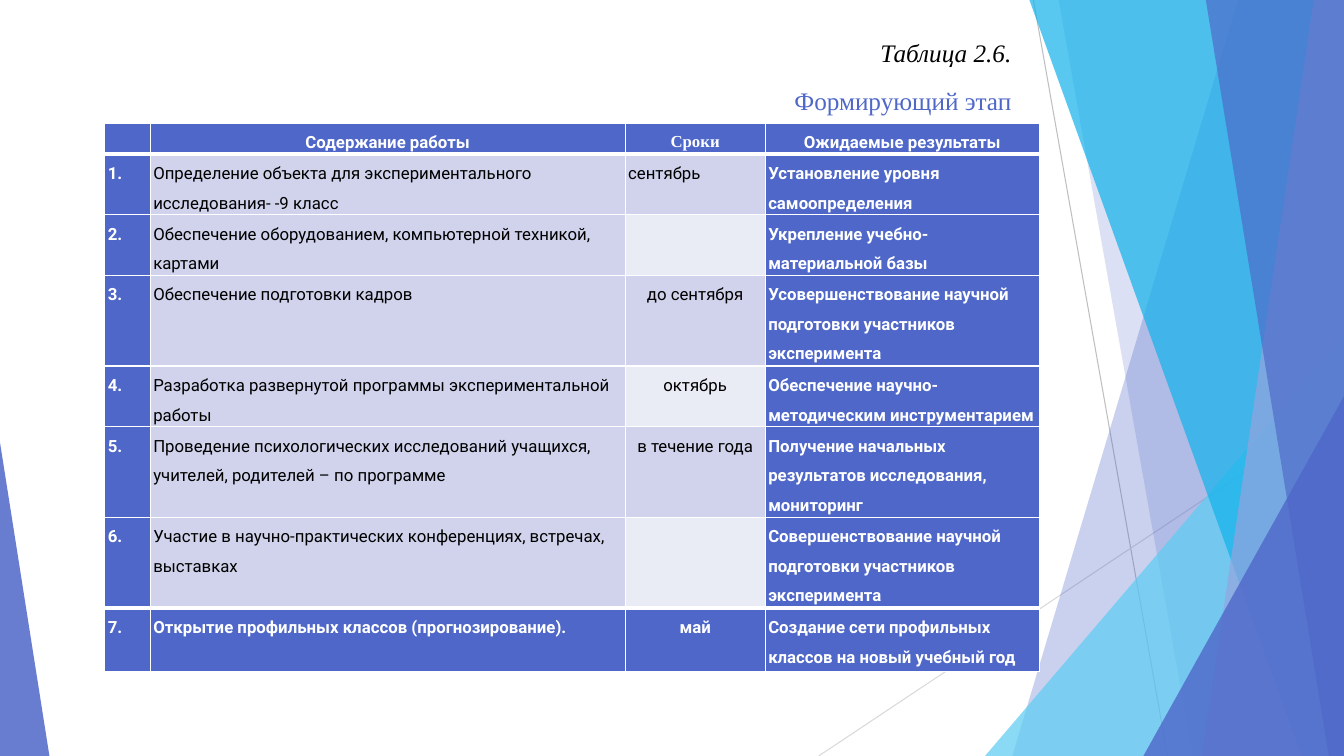
from lxml.etree import SubElement as Sub
from pptx import Presentation
from pptx.dml.color import RGBColor as Rgb
from pptx.enum.shapes import MSO_CONNECTOR as Conn, MSO_SHAPE as Kind
from pptx.enum.text import PP_ALIGN as Al
from pptx.oxml.ns import qn
from pptx.util import Inches, Pt

WHITE = Rgb(0xFF, 0xFF, 0xFF)
BLACK = Rgb(0, 0, 0)
BLUE = Rgb(0x4E, 0x67, 0xC8)
SKY = Rgb(0x5E, 0xCC, 0xF3)
CYAN = Rgb(0x12, 0xB2, 0xEB)
LILAC = Rgb(0x95, 0xA4, 0xDE)
BAND = Rgb(0xD0, 0xD3, 0xEB)
PALE = Rgb(0xE9, 0xEB, 0xF5)
GREY = Rgb(0xBF, 0xBF, 0xBF)
SILVER = Rgb(0xD9, 0xD9, 0xD9)
SANS, SERIF = "Roboto", "Times New Roman"
WIDE, HIGH = 13.33, 7.5

COLS = [0.45, 4.71, 1.39, 2.72]
TALL = [0.31, 0.58, 0.59, 0.88, 0.59, 0.88, 0.88, 0.63]
ROWS = [
    ("", "Содержание работы", "Сроки", "Ожидаемые результаты"),
    ("1.", "Определение объекта для экспериментального исследования- -9 класс",
     "сентябрь", "Установление уровня самоопределения"),
    ("2.", "Обеспечение оборудованием, компьютерной техникой, картами",
     "", "Укрепление учебно-материальной базы"),
    ("3.", "Обеспечение подготовки кадров",
     "до сентября", "Усовершенствование научной подготовки участников эксперимента"),
    ("4.", "Разработка развернутой программы экспериментальной работы",
     "октябрь", "Обеспечение научно-методическим инструментарием"),
    ("5.", "Проведение психологических исследований учащихся, учителей, родителей – по программе",
     "в течение года", "Получение начальных результатов исследования, мониторинг"),
    ("6.", "Участие в научно-практических конференциях, встречах, выставках",
     "", "Совершенствование научной подготовки участников эксперимента"),
    ("7.", "Открытие профильных классов (прогнозирование).",
     "май", "Создание сети профильных классов на новый учебный год"),
]


class Deck:
    """Holds the slide and draws its elements in one style."""

    def __init__(self):
        self.prs = Presentation()
        self.prs.slide_width, self.prs.slide_height = Inches(WIDE), Inches(HIGH)
        self.slide = self.prs.slides.add_slide(self.prs.slide_layouts[6])
        self.shapes = self.slide.shapes

    def paint(self, shape, color, alpha):
        shape.shadow.inherit = False
        shape.fill.solid()
        shape.fill.fore_color.rgb = color
        shape.line.fill.background()
        tint = shape._element.spPr.find(qn("a:solidFill"))[0]
        Sub(tint, qn("a:alpha"), val=str(alpha * 1000))

    def line(self, x1, y1, x2, y2, color):
        line = self.shapes.add_connector(
            Conn.STRAIGHT, Inches(x1), Inches(y1), Inches(x2), Inches(y2))
        line.line.color.rgb = color
        line.line.width = Pt(0.75)
        Sub(line._element.spPr, qn("a:effectLst"))

    def blade(self, top, foot, color, alpha):
        pen = self.shapes.build_freeform(Inches(top), 0)
        ends = [(WIDE, 0), (WIDE, HIGH), (foot, HIGH)]
        pen.add_line_segments([(Inches(x), Inches(y)) for x, y in ends], close=True)
        self.paint(pen.convert_to_shape(), color, alpha)

    def wedge(self, left, top, width, tip, color, alpha):
        shape = self.shapes.add_shape(
            Kind.ISOSCELES_TRIANGLE, Inches(left), Inches(top),
            Inches(width), Inches(HIGH - top))
        shape.adjustments[0] = tip
        self.paint(shape, color, alpha)

    def text(self, par, words, size, face, color, align, bold=False, slant=False):
        par.alignment = align
        par.line_spacing = 1.5
        run = par.add_run()
        run.text = words
        font = run.font
        font.size, font.name, font.bold, font.italic = Pt(size), face, bold, slant
        font.color.rgb = color

    def title(self, first, second):
        box = self.shapes.add_textbox(Inches(0.73), Inches(0.17), Inches(9.4), Inches(1))
        frame = box.text_frame
        frame.word_wrap = True
        self.text(frame.paragraphs[0], first, 18, SERIF, BLACK, Al.RIGHT, slant=True)
        par = frame.add_paragraph()
        par.space_before = Pt(2)
        self.text(par, second, 18, SERIF, BLUE, Al.RIGHT)

    def edge(self, cell, top, foot):
        props = cell._tc.get_or_add_tcPr()
        for side, width in zip("LRTB", (1, 1, top, foot)):
            line = Sub(props, qn("a:ln" + side), w=str(int(Pt(width))))
            Sub(Sub(line, qn("a:solidFill")), qn("a:srgbClr"), val=str(WHITE))

    def cell(self, cell, words, row, col):
        last = len(ROWS) - 1
        head = row in (0, last) or col in (0, 3)
        self.edge(cell, 3 if row in (1, last) else 1, 3 if row in (0, last - 1) else 1)
        cell.margin_left = cell.margin_right = Inches(0.03)
        cell.margin_top = cell.margin_bottom = 0
        pale = col == 2 and row % 2 == 0
        cell.fill.solid()
        cell.fill.fore_color.rgb = BLUE if head else PALE if pale else BAND
        par = cell.text_frame.paragraphs[0]
        if not words:
            Sub(par._p, qn("a:endParaRPr"), sz="1200")
            return
        mid = row == 0 or (col == 2 and row > 1)
        face = SERIF if (row, col) == (0, 2) else SANS
        self.text(par, words, 12, face, WHITE if head else BLACK,
                  Al.CENTER if mid else Al.LEFT, bold=head)

    def table(self):
        grid = self.shapes.add_table(
            len(ROWS), len(COLS), Inches(1.04), Inches(1.22),
            Inches(sum(COLS)), Inches(sum(TALL))).table
        for col, width in zip(grid.columns, COLS):
            col.width = Inches(width)
        for r, texts in enumerate(ROWS):
            grid.rows[r].height = Inches(TALL[r])
            for c, words in enumerate(texts):
                self.cell(grid.cell(r, c), words, r, c)


def main():
    deck = Deck()
    deck.line(10.25, 0, 11.58, HIGH, GREY)
    deck.line(WIDE, 4.03, 8.12, HIGH, SILVER)
    deck.blade(12.28, 10.04, BLUE, 30)
    deck.blade(10.5, 11.83, BLUE, 20)
    deck.wedge(9.77, 3.33, 3.56, 1, SKY, 72)
    deck.blade(10.21, 12.91, CYAN, 70)
    deck.blade(13.03, 11.92, LILAC, 70)
    deck.blade(11.96, 13.18, BLUE, 65)
    deck.wedge(11.34, 3.93, 1.99, 1, BLUE, 80)
    deck.wedge(0, 4.39, 0.49, 0, BLUE, 85)
    deck.title("Таблица 2.6.", "Формирующий этап")
    deck.table()
    deck.prs.save("out.pptx")


if __name__ == "__main__":
    main()
